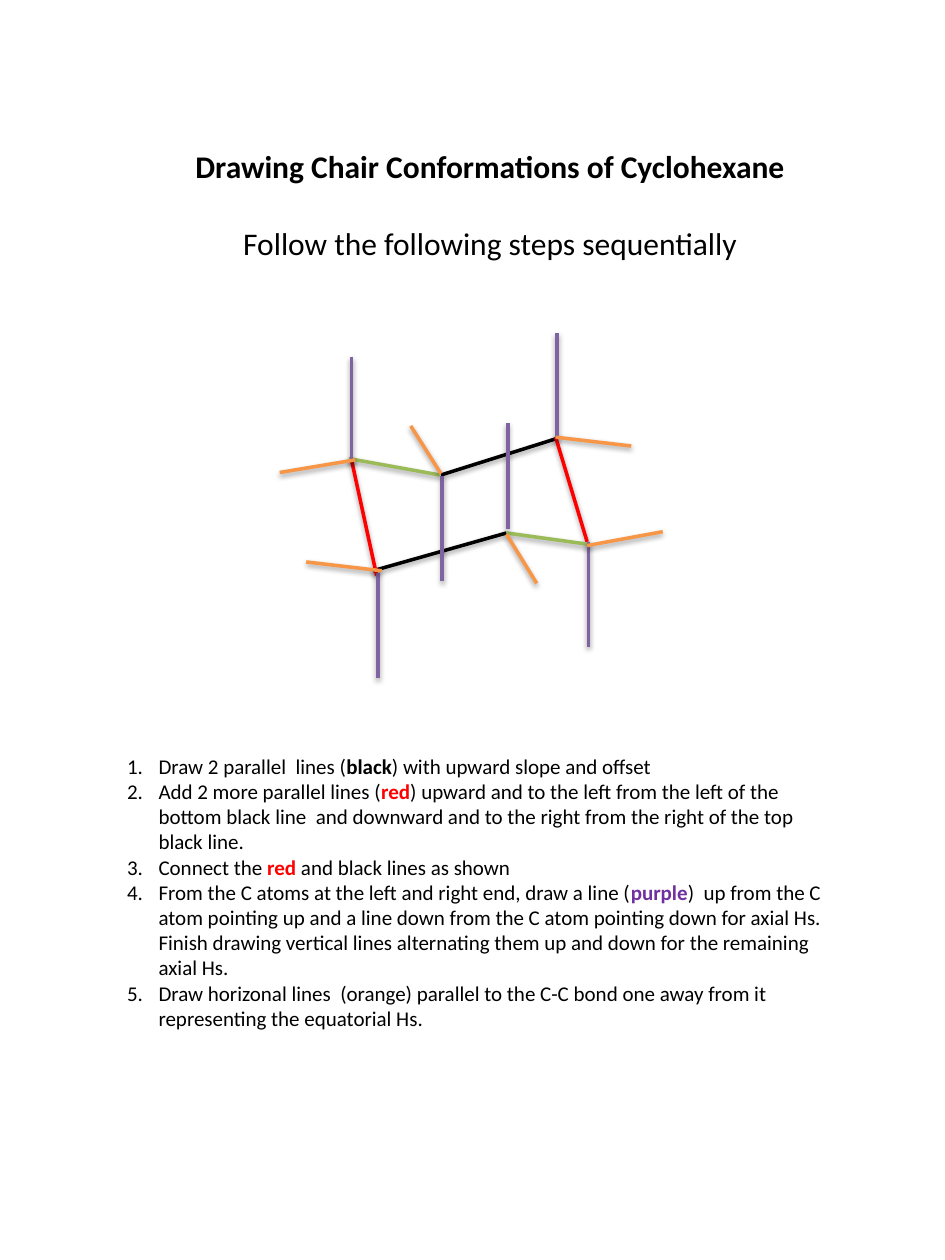
from lxml import etree
from pptx import Presentation, util as u
from pptx.dml.color import RGBColor
from pptx.enum import shapes, text
from pptx.oxml.ns import qn

COLOURS = {
    "black": "000000", "red": "FF0000", "green": "9BBB59",
    "violet": "8064A2", "orange": "F79646", "purple": "7030A0",
}

# Bonds of each colour: start x, start y, end x, end y
BONDS = {
    "black": [(2.96, 4.53, 4.02, 4.23), (3.5, 3.77, 4.42, 3.48)],
    "red": [(2.99, 4.57, 2.79, 3.65), (4.66, 4.3, 4.41, 3.47)],
    "green": [(2.77, 3.64, 3.49, 3.77), (4.02, 4.23, 4.67, 4.32)],
    "orange": [(4.66, 4.33, 5.26, 4.22), (4.41, 3.47, 5.01, 3.54),
               (4.02, 4.24, 4.26, 4.63), (2.43, 4.46, 3.03, 4.53),
               (2.22, 3.75, 2.82, 3.65), (3.26, 3.38, 3.5, 3.76)],
}

# Axial bonds are vertical and equally long: x, top
AXIAL_LENGTH = 0.835
AXIAL_TOPS = [(4.67, 4.3), (4.03, 3.36), (3, 4.55),
              (2.79, 2.83), (3.51, 3.78), (4.42, 2.64)]

# Each step: text before, colour word, text after
STEPS = [
    ("Draw 2 parallel  lines (", "black", ") with upward slope and offset"),
    ("Add 2 more parallel lines (", "red",
     ") upward and to the left from the left of the  bottom black line  and "
     "downward and to the right from the right of the top black line."),
    ("Connect the ", "red", " and black lines as shown"),
    ("From the C atoms at the left and right end, draw a line (", "purple",
     ")  up from the C atom pointing up and a line down from the C atom "
     "pointing down for axial Hs.  Finish drawing vertical lines alternating "
     "them up and down for the remaining axial Hs."),
    ("Draw horizonal lines  (orange) parallel to the C-C bond one away from it  "
     "representing the equatorial Hs.",),
]


def add_span(para, words, size=12, bold=False, colour="black"):
    span = para.add_run()
    span.text = words
    span.font.name = "Calibri"
    span.font.size = u.Pt(size)
    span.font.bold = bold
    span.font.color.rgb = RGBColor.from_string(COLOURS[colour])


class Sheet:
    """Style of the page and the elements placed on it."""
    line_width = u.Pt(2)
    indent = u.Inches(0.25)

    def __init__(self, page):
        self.page = page

    def bond(self, x1, y1, x2, y2, colour):
        line = self.page.shapes.add_connector(
            shapes.MSO_CONNECTOR.STRAIGHT, *map(u.Inches, (x1, y1, x2, y2)))
        line.line.width = self.line_width
        line.line.color.rgb = RGBColor.from_string(COLOURS[colour])
        # Soft shadow straight below
        effects = etree.SubElement(line._element.spPr, qn("a:effectLst"))
        shadow = etree.SubElement(
            effects, qn("a:outerShdw"), blurRad=str(u.Pt(3.1)),
            dist=str(u.Pt(1.6)), dir="5400000", rotWithShape="0")
        shade = etree.SubElement(shadow, qn("a:srgbClr"), val=COLOURS["black"])
        etree.SubElement(shade, qn("a:alpha"), val="38000")

    def text_box(self, left, top, width, height, wrap=True):
        box = self.page.shapes.add_textbox(
            *map(u.Inches, (left, top, width, height)))
        box.text_frame.word_wrap = wrap
        box.text_frame.auto_size = text.MSO_AUTO_SIZE.SHAPE_TO_FIT_TEXT
        return box.text_frame

    def heading(self, title, subtitle):
        frame = self.text_box(1.43, 1.12, 4.92, 1.01, wrap=False)
        first, second = frame.paragraphs[0], frame.add_paragraph()
        first.alignment = second.alignment = text.PP_ALIGN.CENTER
        second.space_before = u.Pt(22)
        add_span(first, title, size=18, bold=True)
        add_span(second, subtitle, size=18)

    def numbered_list(self, steps):
        frame = self.text_box(0.91, 5.93, 5.82, 2.32)
        for index, step in enumerate(steps):
            para = frame.add_paragraph() if index else frame.paragraphs[0]
            props = para._p.get_or_add_pPr()
            props.set("marL", str(self.indent))
            props.set("indent", str(-self.indent))
            etree.SubElement(props, qn("a:buFont"), typeface="+mj-lt")
            etree.SubElement(props, qn("a:buAutoNum"), type="arabicPeriod")
            for position, words in enumerate(step):
                key = position == 1
                add_span(para, words, bold=key, colour=words if key else "black")


def main():
    deck = Presentation()
    deck.slide_width, deck.slide_height = u.Inches(7.5), u.Inches(10)
    sheet = Sheet(deck.slides.add_slide(deck.slide_layouts[6]))

    # Ring, then axial bonds, then equatorial bonds on top
    axial = [(x, top, x, top + AXIAL_LENGTH) for x, top in AXIAL_TOPS]
    bonds = BONDS | {"violet": axial}
    for colour in ("black", "red", "green", "violet", "orange"):
        for ends in bonds[colour]:
            sheet.bond(*ends, colour)

    # Heading and instructions
    sheet.heading("Drawing Chair Conformations of Cyclohexane",
                  "Follow the following steps sequentially")
    sheet.numbered_list(STEPS)
    deck.save("out.pptx")


if __name__ == "__main__":
    main()
